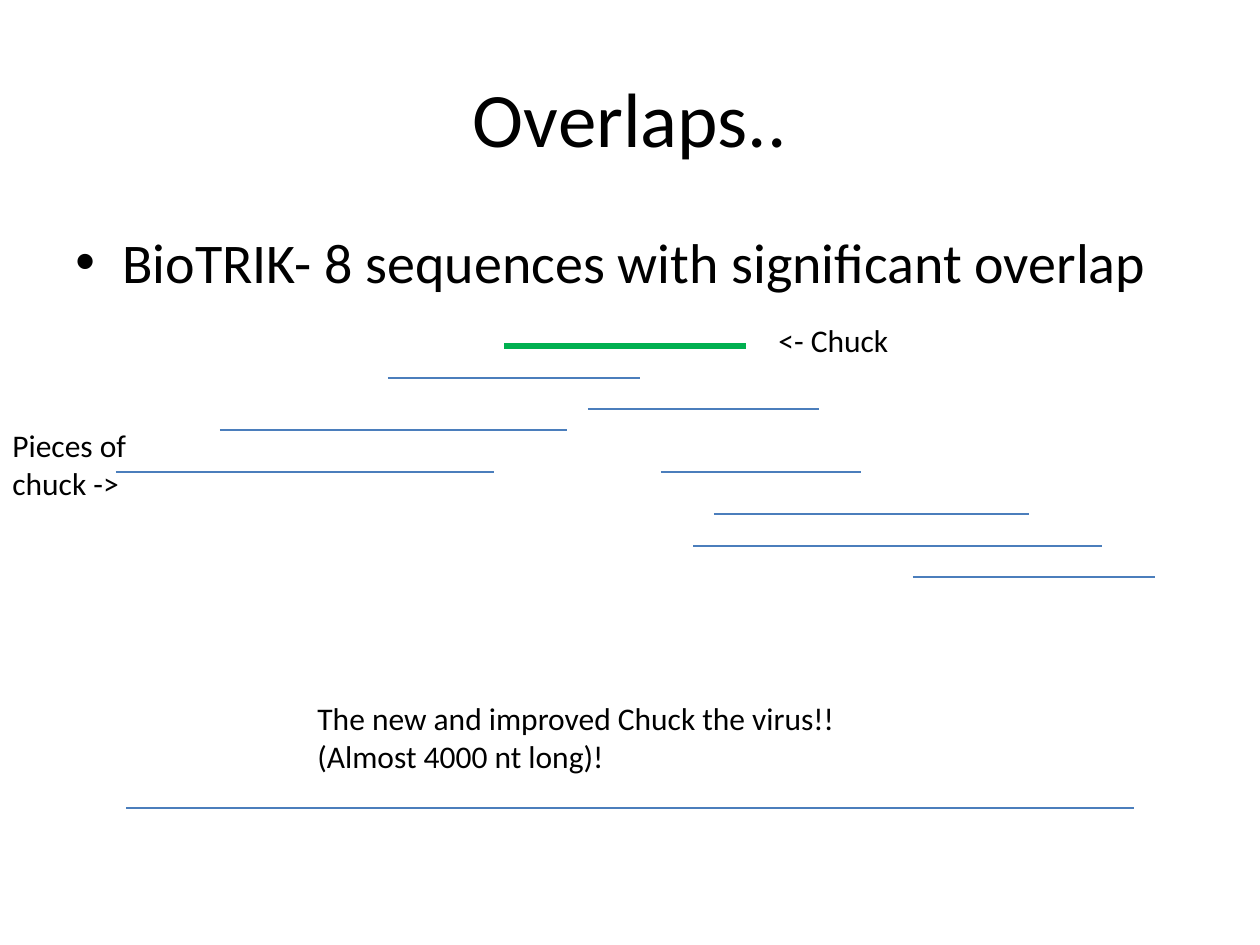
import dataclasses

import pptx
import pptx.dml.color
import pptx.enum.shapes
import pptx.enum.text
import pptx.oxml.ns
import pptx.util
import lxml.etree

EMU_PER_PX = 914400 / 126
ALIGN = pptx.enum.text.PP_ALIGN
ANCHOR = pptx.enum.text.MSO_ANCHOR


@dataclasses.dataclass(frozen=True)
class Theme:
    """Colours, font and type sizes."""
    font: str = "Calibri"
    ink: str = "000000"
    piece: str = "4B7EBC"
    chuck: str = "00B050"
    title: int = 44
    body: int = 32
    label: int = 18
    thin: float = 0.75
    thick: float = 3


THEME = Theme()

PIECES = [
    (388, 640, 378),
    (588, 819, 409),
    (220, 567, 430),
    (116, 494, 472),
    (661, 861, 472),
    (714, 1029, 514),
    (693, 1102, 546),
    (913, 1155, 577),
]


def px(n):
    """Turn pixels into EMU."""
    return pptx.util.Emu(round(n * EMU_PER_PX))


def rgb(value):
    """Turn a hex string into a colour."""
    return pptx.dml.color.RGBColor.from_string(value)


def add_bullet(p, indent):
    """Give a paragraph a round bullet with a hanging indent."""
    pPr = p._p.get_or_add_pPr()
    pPr.set("marL", str(px(indent)))
    pPr.set("indent", str(-px(indent)))
    font = lxml.etree.SubElement(pPr, pptx.oxml.ns.qn("a:buFont"))
    font.set("typeface", "Arial")
    bullet = lxml.etree.SubElement(pPr, pptx.oxml.ns.qn("a:buChar"))
    bullet.set("char", "•")


def add_text(s, text, box, size=THEME.label, align=ALIGN.LEFT,
             anchor=ANCHOR.TOP, indent=0):
    """Add a wrapped text box, bulleted when an indent is given."""
    sp = s.shapes.add_textbox(*map(px, box))
    tf = sp.text_frame
    tf.word_wrap = True
    tf.vertical_anchor = anchor
    p = tf.paragraphs[0]
    p.alignment = align
    if indent:
        add_bullet(p, indent)
    r = p.add_run()
    r.text = text
    r.font.name = THEME.font
    r.font.size = pptx.util.Pt(size)
    r.font.color.rgb = rgb(THEME.ink)


def add_sequence(s, left, right, y, color=THEME.piece, width=THEME.thin):
    """Add a horizontal line that stands for a sequence."""
    line = s.shapes.add_connector(
        pptx.enum.shapes.MSO_CONNECTOR.STRAIGHT,
        px(left), px(y), px(right), px(y))
    line.line.color.rgb = rgb(color)
    line.line.width = pptx.util.Pt(width)
    lxml.etree.SubElement(line._element.spPr, pptx.oxml.ns.qn("a:effectLst"))


def main():
    """Build the slide and save it."""
    prs = pptx.Presentation()
    prs.slide_width, prs.slide_height = px(1260), px(945)
    s = prs.slides.add_slide(prs.slide_layouts[6])

    add_text(s, "Overlaps..", (63, 38, 1134, 157), size=THEME.title,
             align=ALIGN.CENTER, anchor=ANCHOR.MIDDLE)
    add_text(s, "BioTRIK- 8 sequences with significant overlap",
             (63, 221, 1134, 624), size=THEME.body, indent=47)

    add_sequence(s, 504, 746, 346, color=THEME.chuck, width=THEME.thick)
    for left, right, y in PIECES:
        add_sequence(s, left, right, y)
    add_sequence(s, 126, 1134, 808)

    add_text(s, "<- Chuck", (766, 315, 136, 50))
    add_text(s, "Pieces of chuck ->", (0, 420, 179, 89))
    add_text(s, "The new and improved Chuck the virus!! (Almost 4000 nt long)!",
             (305, 693, 588, 89))
    prs.save("out.pptx")


if __name__ == "__main__":
    main()
